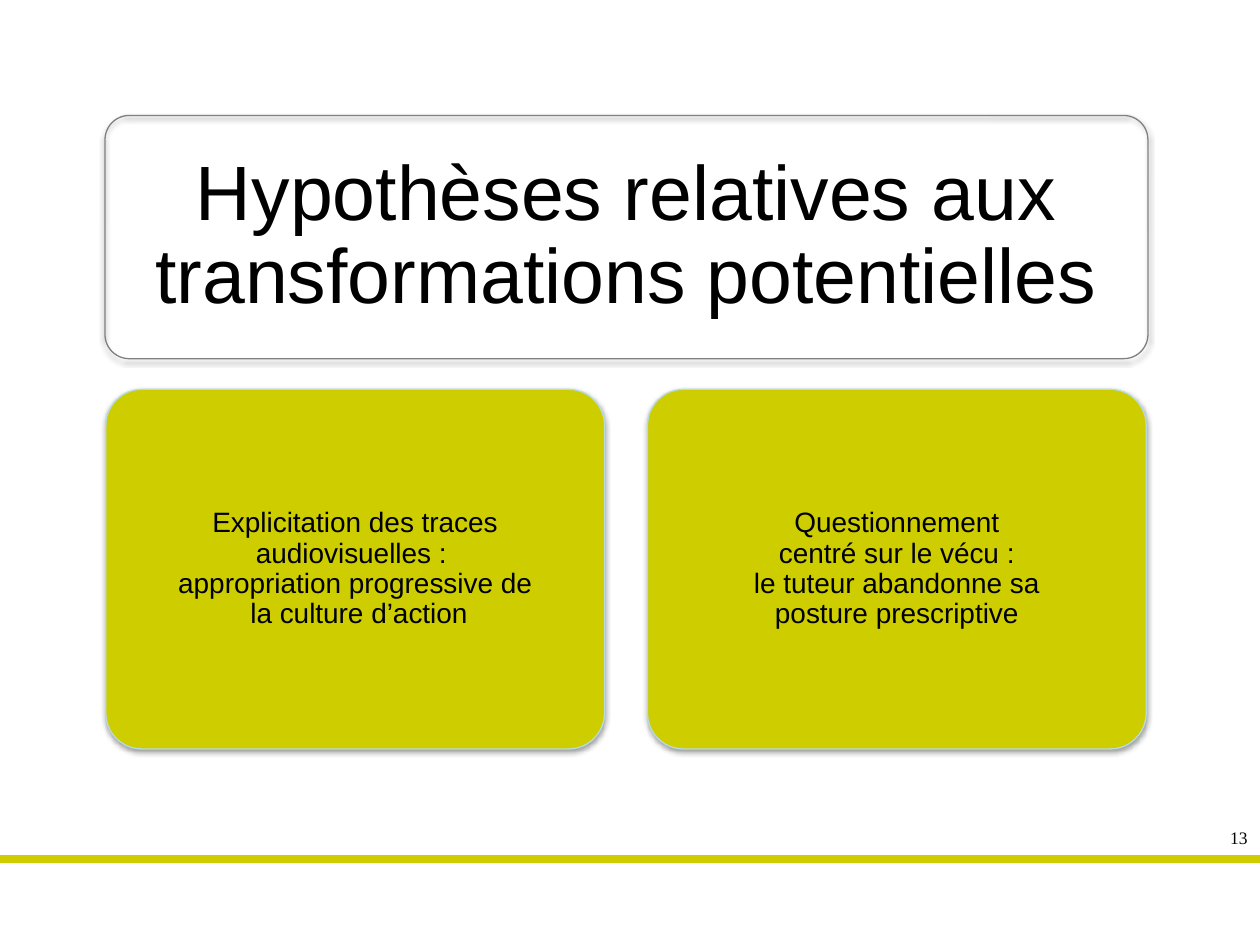
from dataclasses import dataclass

import lxml.etree
import pptx
import pptx.dml.color
import pptx.enum.shapes
import pptx.enum.text
import pptx.oxml
import pptx.oxml.ns
import pptx.util

Pt = pptx.util.Pt
RGBColor = pptx.dml.color.RGBColor
PP_ALIGN = pptx.enum.text.PP_ALIGN
MSO_ANCHOR = pptx.enum.text.MSO_ANCHOR

LIME = RGBColor(0xCD, 0xCD, 0x00)
PALE_BLUE = RGBColor(0xB6, 0xDC, 0xDF)
GREY = RGBColor(0x80, 0x80, 0x80)
BLACK = RGBColor(0x00, 0x00, 0x00)

SLIDE_WIDTH = 720
SLIDE_HEIGHT = 540
CARD_LEFT = 60.5
CARD_TOP = 222.5
CARD_WIDTH = 285
CARD_HEIGHT = 205.5
CARD_STEP = 309.5

SHADOW = (
    '<a:outerShdw xmlns:a="http://schemas.openxmlformats.org/drawingml/2006/main" '
    f'blurRad="{Pt(3.1)}" dist="{Pt(1.6)}" dir="5400000" rotWithShape="0">'
    '<a:srgbClr val="000000"><a:alpha val="38000"/></a:srgbClr></a:outerShdw>'
)


@dataclass
class Box:
    left: float
    top: float
    width: float
    height: float

    def lengths(self) -> tuple:
        return Pt(self.left), Pt(self.top), Pt(self.width), Pt(self.height)


@dataclass
class Panel:
    box: Box
    line: RGBColor
    fill: RGBColor | None = None


def draw_panel(slide, panel: Panel):
    shape = slide.shapes.add_shape(
        pptx.enum.shapes.MSO_SHAPE.ROUNDED_RECTANGLE, *panel.box.lengths()
    )
    shape.adjustments[0] = 0.1
    if panel.fill is None:
        shape.fill.background()
    else:
        shape.fill.solid()
        shape.fill.fore_color.rgb = panel.fill
    shape.line.color.rgb = panel.line
    shape.line.width = Pt(0.75)
    shape.shadow.inherit = False
    effects = shape._element.spPr.find(pptx.oxml.ns.qn("a:effectLst"))
    effects.append(pptx.oxml.parse_xml(SHADOW))
    return shape


def write_text(shape, lines: list[str], size: float, inset: float,
               font_name: str = "Arial",
               alignment: PP_ALIGN = PP_ALIGN.CENTER,
               spacing: float = 0.9) -> None:
    frame = shape.text_frame
    frame.word_wrap = True
    frame.auto_size = pptx.enum.text.MSO_AUTO_SIZE.NONE
    frame.vertical_anchor = MSO_ANCHOR.MIDDLE
    frame.margin_left = frame.margin_right = Pt(inset)
    frame.margin_top = frame.margin_bottom = Pt(min(inset, 13))
    paragraph = frame.paragraphs[0]
    paragraph.alignment = alignment
    paragraph.line_spacing = spacing
    for index, line in enumerate(lines):
        if index:
            paragraph.add_line_break()
        run = paragraph.add_run()
        run.text = line
        run.font.name = font_name
        run.font.size = Pt(size)
        run.font.color.rgb = BLACK


def draw_footer(slide, number: str) -> None:
    rule = slide.shapes.add_connector(
        pptx.enum.shapes.MSO_CONNECTOR.STRAIGHT,
        Pt(SLIDE_WIDTH), Pt(491), Pt(0), Pt(491),
    )
    rule.line.color.rgb = LIME
    rule.line.width = Pt(4.5)
    lxml.etree.SubElement(rule._element.spPr, pptx.oxml.ns.qn("a:effectLst"))
    number_box = slide.shapes.add_textbox(*Box(683, 469, 37, 19.5).lengths())
    write_text(number_box, [number], 10, 7.2, "Times New Roman", PP_ALIGN.RIGHT, 1.0)


def draw_title(slide, text: str) -> None:
    draw_panel(slide, Panel(Box(60, 66, 596, 139), GREY))
    title = slide.shapes.title
    slide.shapes._spTree.append(title._element)
    title.left, title.top, title.width, title.height = Box(64, 70, 588, 131).lengths()
    write_text(title, [text], 44, 13)


def main() -> None:
    presentation = pptx.Presentation()
    presentation.slide_width = Pt(SLIDE_WIDTH)
    presentation.slide_height = Pt(SLIDE_HEIGHT)
    slide = presentation.slides.add_slide(presentation.slide_layouts[5])

    draw_footer(slide, "13")
    draw_title(slide, "Hypothèses relatives aux transformations potentielles")

    hypotheses = [
        ["Explicitation des traces audiovisuelles : ",
         "appropriation progressive de",
         " la culture d’action"],
        ["Questionnement",
         "centré sur le vécu :",
         " le tuteur abandonne sa ",
         "posture prescriptive"],
    ]
    for index, lines in enumerate(hypotheses):
        box = Box(CARD_LEFT + index * CARD_STEP, CARD_TOP, CARD_WIDTH, CARD_HEIGHT)
        card = draw_panel(slide, Panel(box, PALE_BLUE, LIME))
        write_text(card, lines, 16, 7)

    presentation.save("out.pptx")


if __name__ == "__main__":
    main()
